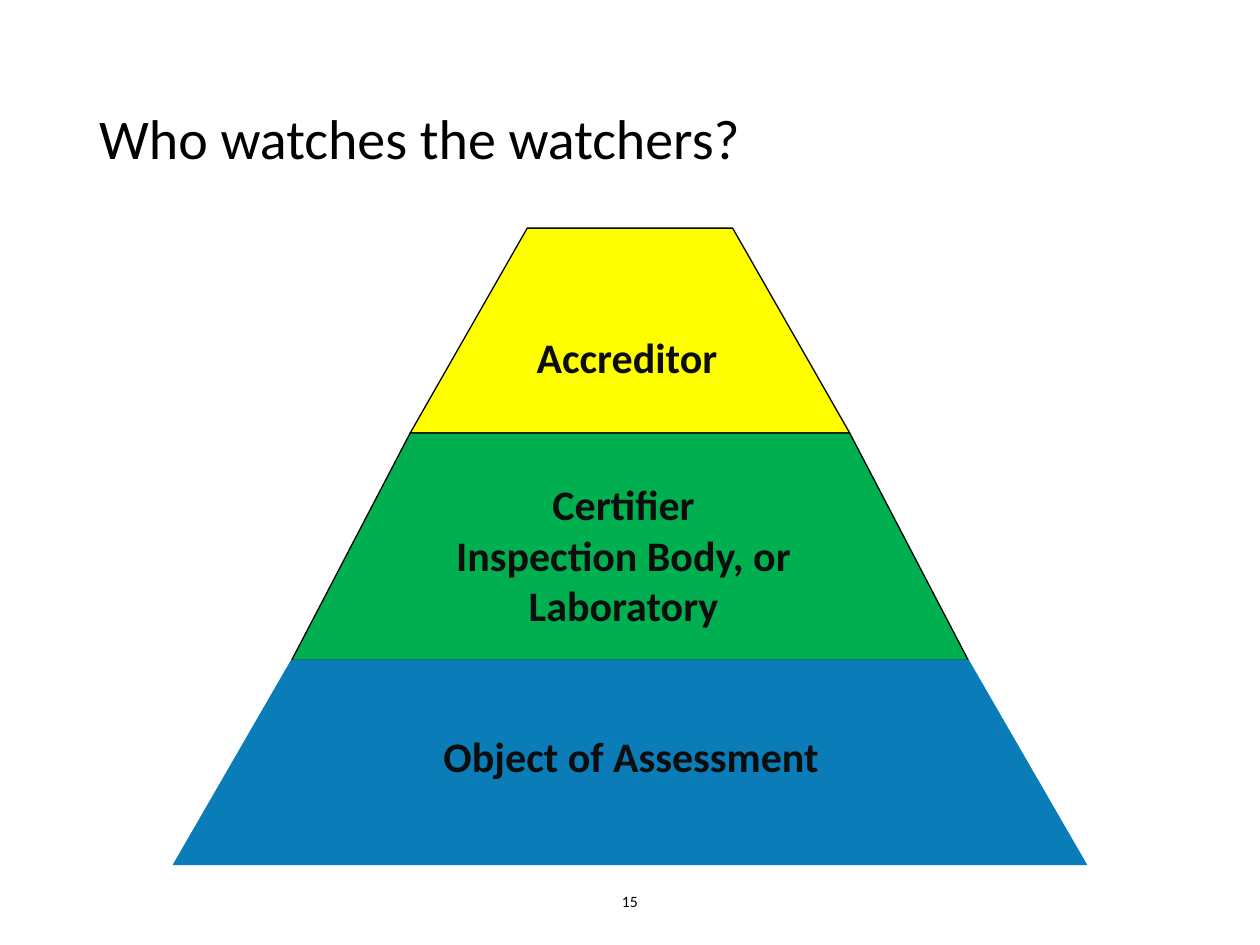
from pptx import Presentation
from pptx.dml.color import RGBColor
from pptx.enum.text import MSO_ANCHOR, PP_ALIGN
from pptx.util import Cm, Pt

BLACK = RGBColor(0x00, 0x00, 0x00)
NEAR_BLACK = RGBColor(0x0D, 0x0D, 0x0D)
YELLOW = RGBColor(0xFF, 0xFF, 0x00)
GREEN = RGBColor(0x00, 0xB0, 0x50)
BLUE = RGBColor(0x0A, 0x7C, 0xB8)

LEFT, CENTER = PP_ALIGN.LEFT, PP_ALIGN.CENTER
TOP, MIDDLE = MSO_ANCHOR.TOP, MSO_ANCHOR.MIDDLE

AXIS = 12.7
# Height on the slide and half width of the pyramid at each edge, in cm
EDGES = [(4.6, 2.07), (8.73, 4.43), (13.31, 6.82), (17.43, 9.2)]
# Fill and outline of each tier, from the top down
TIERS = [(YELLOW, BLACK), (GREEN, BLACK), (BLUE, BLUE)]

LABEL_FONT = {"size": Pt(24), "bold": True}
LABELS = [
    (["Object of Assessment"], (8.38, 14.6, 8.69, 2.31)),
    (["Certifier", "Inspection Body, or", "Laboratory"], (7.49, 9.53, 10.16, 4.24)),
    (["Accreditor"], (10.2, 6.55, 4.88, 1.27)),
]


def add_tier(slide, upper, lower, fill_color, line_color):
    """Draw a trapezoid between two edges, centred on the axis."""
    (top, top_half), (bottom, bottom_half) = upper, lower
    corners = [
        (Cm(AXIS - top_half), Cm(top)),
        (Cm(AXIS + top_half), Cm(top)),
        (Cm(AXIS + bottom_half), Cm(bottom)),
        (Cm(AXIS - bottom_half), Cm(bottom)),
    ]
    builder = slide.shapes.build_freeform(*corners[0])
    builder.add_line_segments(corners[1:], close=True)
    shape = builder.convert_to_shape()
    shape.shadow.inherit = False
    shape.fill.solid()
    shape.fill.fore_color.rgb = fill_color
    shape.line.color.rgb = line_color
    shape.line.width = Pt(0.75)


def add_text(slide, lines, box, font_format, color, alignment=CENTER,
             anchor=TOP, line_spacing=None):
    frame = slide.shapes.add_textbox(*map(Cm, box)).text_frame
    frame.word_wrap = True
    frame.vertical_anchor = anchor
    frame.text = "\n".join(lines)
    for paragraph in frame.paragraphs:
        paragraph.alignment = alignment
        paragraph.line_spacing = line_spacing
        paragraph.font.name = "Calibri"
        paragraph.font.color.rgb = color
        for name, value in font_format.items():
            setattr(paragraph.font, name, value)


def main():
    presentation = Presentation()
    presentation.slide_width, presentation.slide_height = Cm(25.4), Cm(19.05)
    slide = presentation.slides.add_slide(presentation.slide_layouts[6])

    add_text(slide, ["Who watches the watchers?"], (1.75, 1.02, 21.9, 3.68),
             {"size": Pt(32)}, BLACK, LEFT, MIDDLE, 0.9)
    add_text(slide, ["15"], (8.41, 17.65, 8.58, 1.02),
             {"size": Pt(9)}, BLACK, anchor=MIDDLE)
    for upper, lower, colors in zip(EDGES, EDGES[1:], TIERS):
        add_tier(slide, upper, lower, *colors)
    for lines, box in LABELS:
        add_text(slide, lines, box, LABEL_FONT, NEAR_BLACK)

    presentation.save("out.pptx")


if __name__ == "__main__":
    main()
